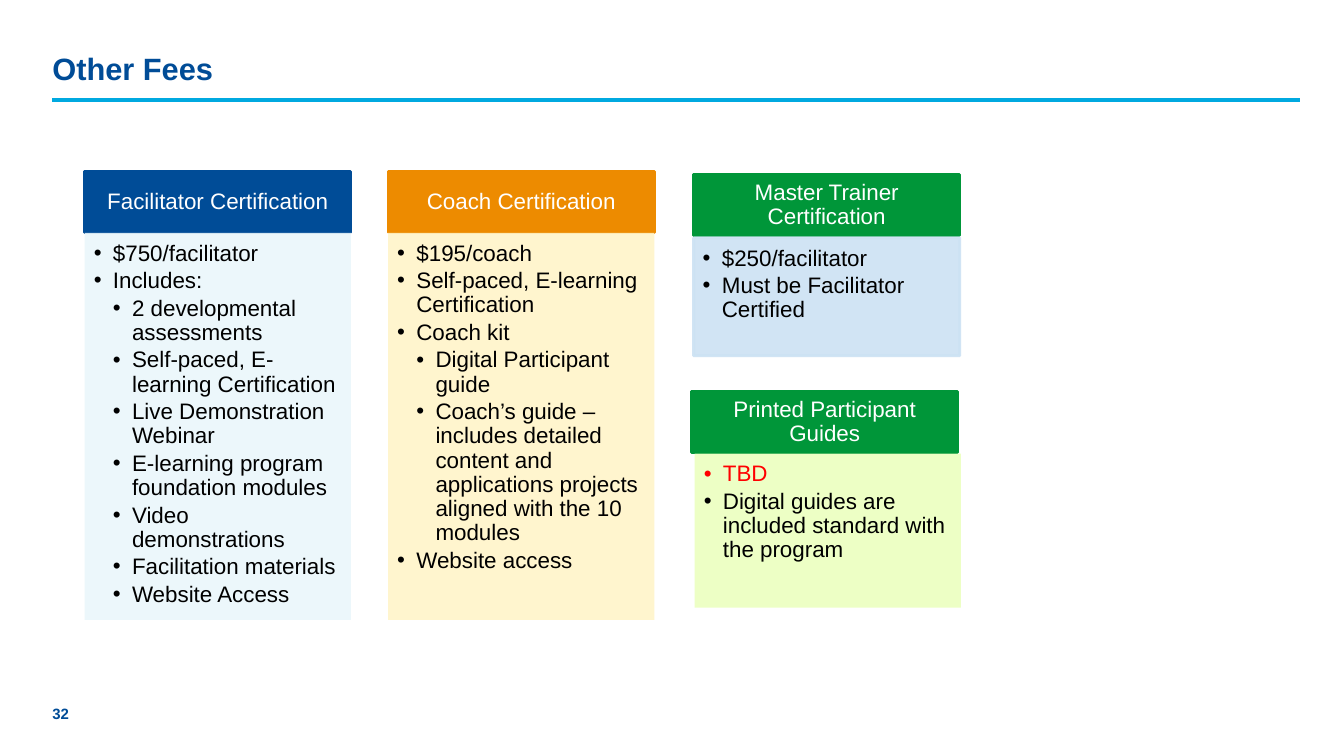
from dataclasses import dataclass

from lxml.etree import SubElement
from pptx import Presentation
from pptx.dml.color import RGBColor
from pptx.enum.shapes import MSO_CONNECTOR as Connector, MSO_SHAPE as Shape
from pptx.enum.text import MSO_ANCHOR as Anchor, PP_ALIGN as Align
from pptx.oxml.ns import qn
from pptx.util import Inches, Pt


@dataclass(frozen=True)
class Theme:
    font: str = "Arial"
    title_size: float = 22
    card_size: float = 16
    number_size: float = 10.7
    navy: str = "004C97"
    cyan: str = "00A9E0"
    orange: str = "ED8B00"
    green: str = "009639"
    white: str = "FFFFFF"
    black: str = "000000"
    red: str = "FF0000"
    ice: str = "EBF7FB"
    cream: str = "FFF5C9"
    lime: str = "ECFFBF"
    sky: str = "CCE2F3"
    outline: float = 2
    rule: float = 2.75
    opacity: int = 90


THEME = Theme()
CARD_WIDTH = 2.64
HEADER_HEIGHT = 0.61
BULLET_INDENT = 0.19


@dataclass(frozen=True)
class Card:
    """Header and body corners are (left, top); items are (level, text, colour)."""
    heading: str
    header_at: tuple
    header_color: str
    body_at: tuple
    body_height: float
    body_color: str
    items: tuple
    outlined: bool = False


def item(level, text, color=THEME.black):
    return level, text, color


CARDS = (
    Card("Facilitator Certification", (0.84, 1.7), THEME.navy,
         (0.84, 2.31), 3.84, THEME.ice, (
             item(1, "$750/facilitator"),
             item(1, "Includes:"),
             item(2, "2 developmental assessments"),
             item(2, "Self-paced, E-learning Certification"),
             item(2, "Live Demonstration Webinar"),
             item(2, "E-learning program foundation modules"),
             item(2, "Video demonstrations"),
             item(2, "Facilitation materials"),
             item(2, "Website Access"))),
    Card("Coach Certification", (3.85, 1.7), THEME.orange,
         (3.85, 2.31), 3.84, THEME.cream, (
             item(1, "$195/coach"),
             item(1, "Self-paced, E-learning Certification"),
             item(1, "Coach kit"),
             item(2, "Digital Participant guide"),
             item(2, "Coach’s guide – includes detailed content and "
                     "applications projects aligned with the 10 modules"),
             item(1, "Website access"))),
    Card("Printed Participant Guides", (6.86, 3.88), THEME.green,
         (6.89, 4.5), 1.53, THEME.lime, (
             item(1, "TBD", THEME.red),
             item(1, "Digital guides are included standard with the program"))),
    Card("Master Trainer Certification", (6.88, 1.73), THEME.green,
         (6.88, 2.36), 1.17, THEME.sky, (
             item(1, "$250/facilitator"),
             item(1, "Must be Facilitator Certified")), outlined=True),
)


def add_run(paragraph, text, size, color, bold=False):
    run = paragraph.add_run()
    run.text = text
    run.font.name = THEME.font
    run.font.size = Pt(size)
    run.font.bold = bold
    run.font.color.rgb = RGBColor.from_string(color)


def set_frame(shape, anchor, margins, wrap=True):
    frame = shape.text_frame
    frame.word_wrap = wrap
    frame.vertical_anchor = anchor
    (frame.margin_left, frame.margin_top,
     frame.margin_right, frame.margin_bottom) = map(Inches, margins)
    return frame


def set_opacity(fill_format, shape):
    """Make every solid colour of the shape's fill and line see-through."""
    for color in shape.element.spPr.iter(qn("a:srgbClr")):
        SubElement(color, qn("a:alpha"), val=str(fill_format * 1000))


def add_panel(slide, box, color, outlined):
    panel = slide.shapes.add_shape(Shape.RECTANGLE, *map(Inches, box))
    panel.shadow.inherit = False
    panel.fill.solid()
    panel.fill.fore_color.rgb = RGBColor.from_string(color)
    if outlined:
        panel.line.color.rgb = RGBColor.from_string(color)
        panel.line.width = Pt(THEME.outline)
    else:
        panel.line.fill.background()
    return panel


def add_bullet(paragraph, level):
    paragraph.level = level
    properties = paragraph._p.get_or_add_pPr()
    properties.set("marL", str(Inches(BULLET_INDENT * level)))
    properties.set("indent", str(-Inches(BULLET_INDENT)))
    SubElement(properties, qn("a:buFont"), typeface=THEME.font)
    SubElement(properties, qn("a:buChar"), char="•")


def add_header(slide, box, heading, color):
    header = add_panel(slide, box, color, outlined=True)
    frame = set_frame(header, Anchor.MIDDLE, (0.12, 0.07, 0.12, 0.07))
    paragraph = frame.paragraphs[0]
    paragraph.alignment = Align.CENTER
    paragraph.line_spacing = 0.9
    add_run(paragraph, heading, THEME.card_size, THEME.white)


def add_body(slide, box, card):
    body = add_panel(slide, box, card.body_color, card.outlined)
    set_opacity(THEME.opacity, body)
    frame = set_frame(body, Anchor.TOP, (0.09, 0.09, 0.12, 0.14))
    for index, (level, text, color) in enumerate(card.items):
        paragraph = frame.add_paragraph() if index else frame.paragraphs[0]
        add_bullet(paragraph, level)
        paragraph.alignment = Align.LEFT
        paragraph.line_spacing = 0.9
        paragraph.space_after = Pt(0.15 * THEME.card_size)
        add_run(paragraph, text, THEME.card_size, color)


def add_card(slide, card):
    add_header(slide, (*card.header_at, CARD_WIDTH, HEADER_HEIGHT),
               card.heading, card.header_color)
    add_body(slide, (*card.body_at, CARD_WIDTH, card.body_height), card)


def add_label(slide, box, text, size, line_spacing=1.0, wrap=True):
    """Add bold navy text that rests on the bottom of its box."""
    label = slide.shapes.add_textbox(*map(Inches, box))
    paragraph = set_frame(label, Anchor.BOTTOM, (0, 0, 0, 0), wrap).paragraphs[0]
    paragraph.line_spacing = line_spacing
    add_run(paragraph, text, size, THEME.navy, bold=True)


def add_title(slide, box, text):
    left, top, width, height = box
    add_label(slide, box, text, THEME.title_size, line_spacing=1.2)
    rule_top = top + height + 0.13
    rule = slide.shapes.add_connector(
        Connector.STRAIGHT, *map(Inches, (left, rule_top, left + width, rule_top)))
    rule.line.color.rgb = RGBColor.from_string(THEME.cyan)
    rule.line.width = Pt(THEME.rule)
    SubElement(rule.element.spPr, qn("a:effectLst"))


def main():
    presentation = Presentation()
    presentation.slide_width = Inches(13.33)
    presentation.slide_height = Inches(7.5)
    slide = presentation.slides.add_slide(presentation.slide_layouts[6])
    add_title(slide, (0.52, 0.39, 12.37, 0.47), "Other Fees")
    for card in CARDS:
        add_card(slide, card)
    add_label(slide, (0.52, 6.81, 0.36, 0.36), "32", THEME.number_size)
    presentation.save("out.pptx")


if __name__ == "__main__":
    main()
